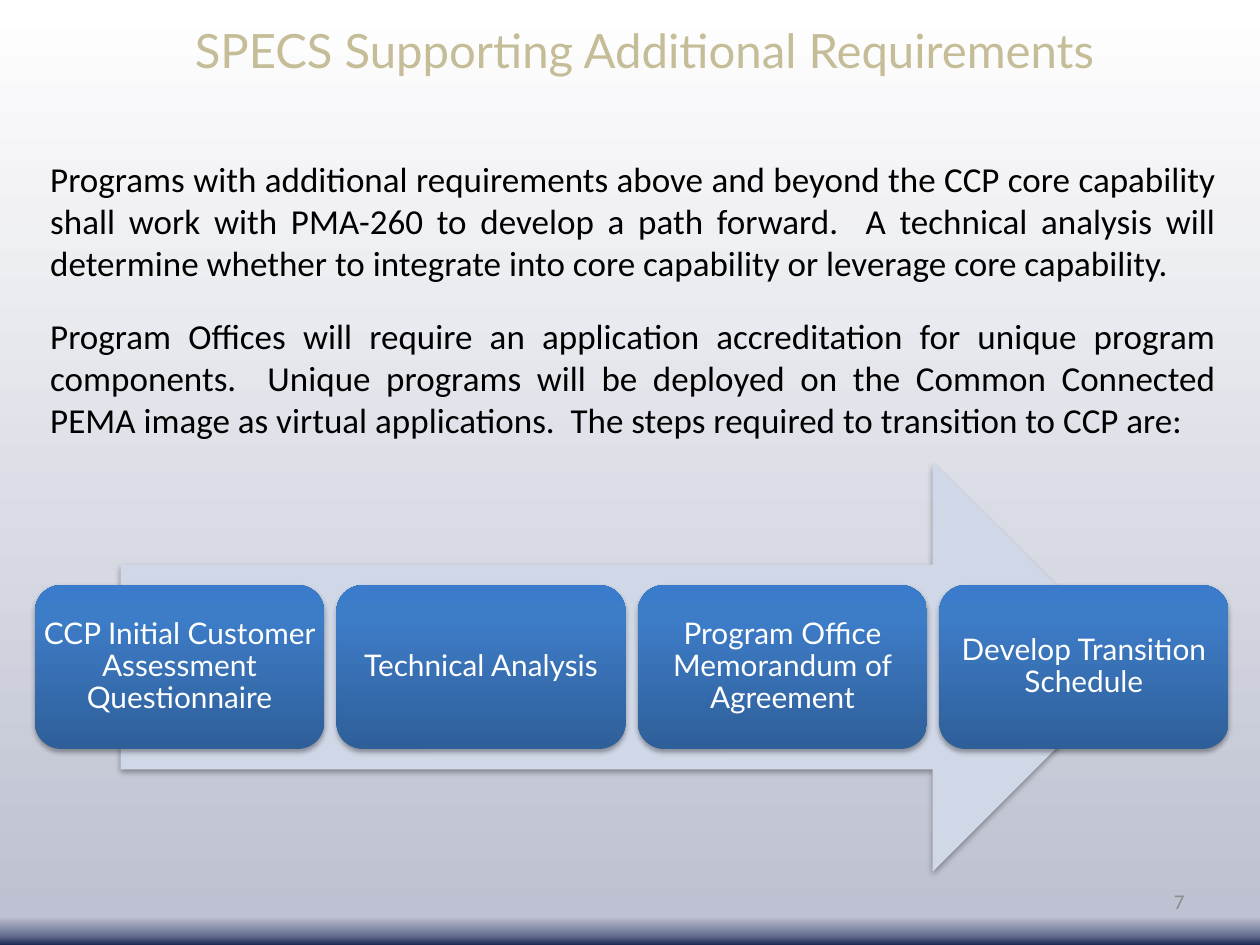
from lxml import etree
from pptx import Presentation
from pptx.dml.color import RGBColor
from pptx.enum.shapes import MSO_SHAPE
from pptx.enum.text import MSO_ANCHOR, PP_ALIGN
from pptx.oxml.ns import qn
from pptx.util import Pt

ARROW, CARD = MSO_SHAPE.RIGHT_ARROW, MSO_SHAPE.ROUNDED_RECTANGLE
TOP, MIDDLE = MSO_ANCHOR.TOP, MSO_ANCHOR.MIDDLE
CENTER, RIGHT, JUSTIFY = PP_ALIGN.CENTER, PP_ALIGN.RIGHT, PP_ALIGN.JUSTIFY

BLACK = RGBColor(0x00, 0x00, 0x00)
WHITE = RGBColor(0xFF, 0xFF, 0xFF)
GRAY = RGBColor(0x8C, 0x8C, 0x8C)
TAN = RGBColor(0xC4, 0xBD, 0x97)
PALE_BLUE = RGBColor(0xD0, 0xD8, 0xE8)
BACKDROP = [(0, RGBColor(0x1A, 0x27, 0x51)), (1, RGBColor(0x66, 0x6F, 0x91)),
            (3, RGBColor(0xBD, 0xC1, 0xD1)), (100, WHITE)]
CARD_BLUES = [(0, RGBColor(0x2F, 0x5F, 0x99)), (80, RGBColor(0x3D, 0x7C, 0xC7)),
              (100, RGBColor(0x3A, 0x7C, 0xCB))]

TITLE = "SPECS Supporting Additional Requirements"
BODY = [
    "Programs with additional requirements above and beyond the CCP core capability "
    "shall work with PMA-260 to develop a path forward.  A technical analysis will "
    "determine whether to integrate into core capability or leverage core capability.",
    "Program Offices will require an application accreditation for unique program "
    "components.  Unique programs will be deployed on the Common Connected PEMA image "
    "as virtual applications.  The steps required to transition to CCP are:",
]
STEPS = [
    "CCP Initial Customer Assessment Questionnaire",
    "Technical Analysis",
    "Program Office Memorandum of Agreement",
    "Develop Transition Schedule",
]


def set_gradient(fill, element, stops):
    """Fill with colour stops running from bottom to top."""
    fill.gradient()
    fill.gradient_angle = 90
    gs_list = element.find(".//" + qn("a:gsLst"))
    for gs in list(gs_list):
        gs_list.remove(gs)
    for position, color in stops:
        gs = etree.SubElement(gs_list, qn("a:gs"), pos=str(position * 1000))
        etree.SubElement(gs, qn("a:srgbClr"), val=str(color))


def add_shadow(sp):
    """Give a shape a soft shadow falling straight down."""
    sp.shadow.inherit = False
    effects = sp._element.spPr.find(qn("a:effectLst"))
    shadow = etree.SubElement(effects, qn("a:outerShdw"), blurRad=str(Pt(3.1)),
                              dist=str(Pt(1.8)), dir="5400000", rotWithShape="0")
    color = etree.SubElement(shadow, qn("a:srgbClr"), val=str(BLACK))
    etree.SubElement(color, qn("a:alpha"), val="35000")


def write_text(tf, paragraphs, size, font, color, align, anchor):
    """Write wrapped paragraphs in one style."""
    tf.word_wrap = True
    tf.vertical_anchor = anchor
    tf.text = "\n".join(paragraphs)
    for p in tf.paragraphs:
        p.alignment = align
        for r in p.runs:
            r.font.size, r.font.name = Pt(size), font
            r.font.color.rgb = color


def add_text(s, box, *style):
    """Add a text box and return its frame."""
    tf = s.shapes.add_textbox(*map(Pt, box)).text_frame
    write_text(tf, *style)
    return tf


def add_body(s, box):
    """Add the justified introduction."""
    tf = add_text(s, box, BODY, 20, "Calibri", BLACK, JUSTIFY, TOP)
    for p, space in zip(tf.paragraphs, (18, 6)):
        p.space_after = Pt(space)


def add_card(s, box, label):
    """Add one step of the process."""
    sp = s.shapes.add_shape(CARD, *map(Pt, box))
    sp.adjustments[0] = 0.16
    set_gradient(sp.fill, sp._element.spPr, CARD_BLUES)
    sp.line.fill.background()
    add_shadow(sp)
    tf = sp.text_frame
    tf.margin_left = tf.margin_right = 0
    write_text(tf, [label], 17, "Lato", WHITE, CENTER, MIDDLE)
    tf.paragraphs[0].line_spacing = 0.9


def add_process(s, box):
    """Add the arrow and the evenly spaced steps across it."""
    left, top, width, height = box
    inset, card_w, card_h = 49, 165.2, 93.6
    arrow = s.shapes.add_shape(
        ARROW, Pt(left + inset), Pt(top), Pt(581), Pt(height))
    arrow.fill.solid()
    arrow.fill.fore_color.rgb = PALE_BLUE
    arrow.line.fill.background()
    add_shadow(arrow)
    pitch = (width - card_w) / (len(STEPS) - 1)
    card_top = top + (height - card_h) / 2
    for i, label in enumerate(STEPS):
        add_card(s, (left + i * pitch, card_top, card_w, card_h), label)


def main():
    """Build and save the slide."""
    prs = Presentation()
    prs.slide_width, prs.slide_height = Pt(720), Pt(540)
    s = prs.slides.add_slide(prs.slide_layouts[6])
    set_gradient(s.background.fill, s._element, BACKDROP)
    add_text(s, (516, 500.5, 168, 28.8), ["7"], 12, "Calibri", GRAY, RIGHT, MIDDLE)
    add_text(s, (28, 9.5, 680.4, 38), [TITLE], 27, "Lato", TAN, CENTER, MIDDLE)
    add_body(s, (21.6, 86.4, 680.4, 170.6))
    add_process(s, (20, 264.2, 682, 234))
    prs.save("out.pptx")


if __name__ == "__main__":
    main()
